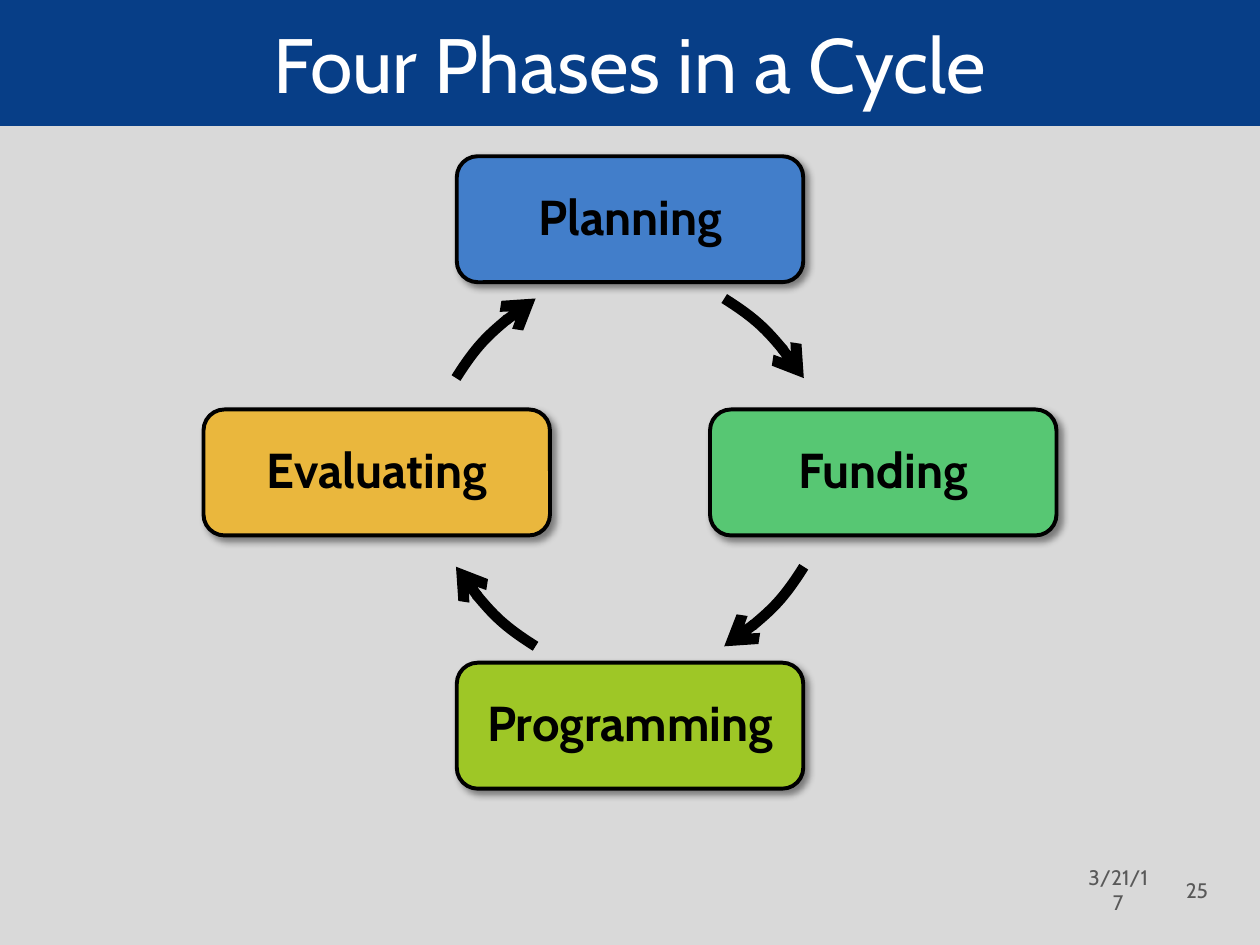
import dataclasses

import pptx
import pptx.dml.color
import pptx.enum.shapes
import pptx.enum.text
import pptx.oxml
import pptx.oxml.ns
import pptx.util

# The slide is a grid of 80 columns by 60 rows
COLS, ROWS = 80, 60
WIDE, HIGH = pptx.util.Inches(10), pptx.util.Inches(7.5)
MID_X, MID_Y = 40, 30
REACH = 16.08  # slide centre to box centre
BOX_W, BOX_H = 22, 8
RING = 32.24  # diameter of the circle behind each arc
SHIFT = 2.6  # slide centre to circle centre, each way
START, END = 302.2, 327.8  # degrees of the first arc

KIND = pptx.enum.shapes.MSO_SHAPE


@dataclasses.dataclass
class Area:
    col: float
    row: float
    cols: float
    rows: float

    def spans(self) -> tuple:
        """Left, top, width and height in slide units."""
        return (int(self.col * WIDE / COLS), int(self.row * HIGH / ROWS),
                int(self.cols * WIDE / COLS), int(self.rows * HIGH / ROWS))


@dataclasses.dataclass
class Phase:
    name: str
    fill: str
    way: tuple  # direction of the box from the centre
    turn: tuple  # direction of the next arc's circle


PHASES = [
    Phase("Planning", "427ECA", (0, -1), (-1, 1)),
    Phase("Funding", "57C773", (1, 0), (-1, -1)),
    Phase("Programming", "9EC726", (0, 1), (1, -1)),
    Phase("Evaluating", "EAB73D", (-1, 0), (1, 1)),
]


def tint(form, code: str) -> None:
    """Give a fill or a font a solid colour."""
    if hasattr(form, "solid"):
        form.solid()
        form = form.fore_color
    else:
        form = form.color
    form.rgb = pptx.dml.color.RGBColor.from_string(code)


def add_xml(parent, body: str) -> None:
    tag, rest = body.split(" ", 1)
    space = pptx.oxml.ns.nsdecls("a")
    parent.append(pptx.oxml.parse_xml(f"<{tag} {space} {rest}"))


def write(shape, text: str, size: float, color: str, bold: bool = False,
          inset: tuple = (0.1, 0.05), line: float = 1.0) -> None:
    """Put centred text into a shape."""
    frame = shape.text_frame
    frame.word_wrap = True
    frame.vertical_anchor = pptx.enum.text.MSO_ANCHOR.MIDDLE
    side, edge = map(pptx.util.Inches, inset)
    frame.margin_left = frame.margin_right = side
    frame.margin_top = frame.margin_bottom = edge
    para = frame.paragraphs[0]
    para.alignment = pptx.enum.text.PP_ALIGN.CENTER
    para.line_spacing = line
    run = para.add_run()
    run.text = text
    run.font.name = "Cabin"
    run.font.size = pptx.util.Pt(size)
    run.font.bold = bold
    tint(run.font, color)


def draw(slide, kind, area: Area, fill: str = "", width: float = 0):
    """Add a preset shape; width is that of a black outline."""
    shape = slide.shapes.add_shape(kind, *area.spans())
    shape.shadow.inherit = False
    if fill:
        tint(shape.fill, fill)
    else:
        shape.fill.background()
    if width:
        tint(shape.line.fill, "000000")
        shape.line.width = pptx.util.Pt(width)
    else:
        shape.line.fill.background()
    return shape


def draw_box(slide, phase: Phase) -> None:
    col = MID_X + phase.way[0] * REACH - BOX_W / 2
    row = MID_Y + phase.way[1] * REACH - BOX_H / 2
    box = draw(slide, KIND.ROUNDED_RECTANGLE, Area(col, row, BOX_W, BOX_H),
               phase.fill, 2.25)
    glow = box._element.spPr.find(pptx.oxml.ns.qn("a:effectLst"))
    add_xml(glow, 'a:outerShdw blurRad="50800" dist="38100" dir="2700000" '
            'algn="tl" rotWithShape="0"><a:srgbClr val="000000">'
            '<a:alpha val="43000"/></a:srgbClr></a:outerShdw>')
    write(box, phase.name, 28, "000000", bold=True, inset=(0.17, 0.17),
          line=0.9)


def draw_arc(slide, step: int, phase: Phase) -> None:
    col = MID_X + phase.turn[0] * SHIFT - RING / 2
    row = MID_Y + phase.turn[1] * SHIFT - RING / 2
    arc = draw(slide, KIND.ARC, Area(col, row, RING, RING), width=6)
    for spot, angle in enumerate((START, END)):
        # Angles are 60000ths of a degree; adjustments are 100000ths
        arc.adjustments[spot] = (angle + 90 * step) % 360 * 0.6
    add_xml(arc.line._get_or_add_ln(), 'a:tailEnd type="arrow"/>')


def draw_note(slide, text: str, area: Area) -> None:
    note = slide.shapes.add_textbox(*area.spans())
    write(note, text, 12, "595959")


def main() -> None:
    deck = pptx.Presentation()
    deck.slide_width, deck.slide_height = WIDE, HIGH
    slide = deck.slides.add_slide(deck.slide_layouts[6])
    tint(slide.background.fill, "D9D9D9")

    # Title band
    band = draw(slide, KIND.RECTANGLE, Area(0, 0, COLS, 8), "073E87")
    write(band, "Four Phases in a Cycle", 44, "FFFFFF", inset=(0.3, 0.08))

    # Date and page number
    draw_note(slide, "3/21/17", Area(68, 55, 6, 3))
    draw_note(slide, "25", Area(74, 55, 4, 3))

    # Cycle of boxes and arrows
    for step, phase in enumerate(PHASES):
        draw_box(slide, phase)
        draw_arc(slide, step, phase)

    deck.save("out.pptx")


if __name__ == "__main__":
    main()
